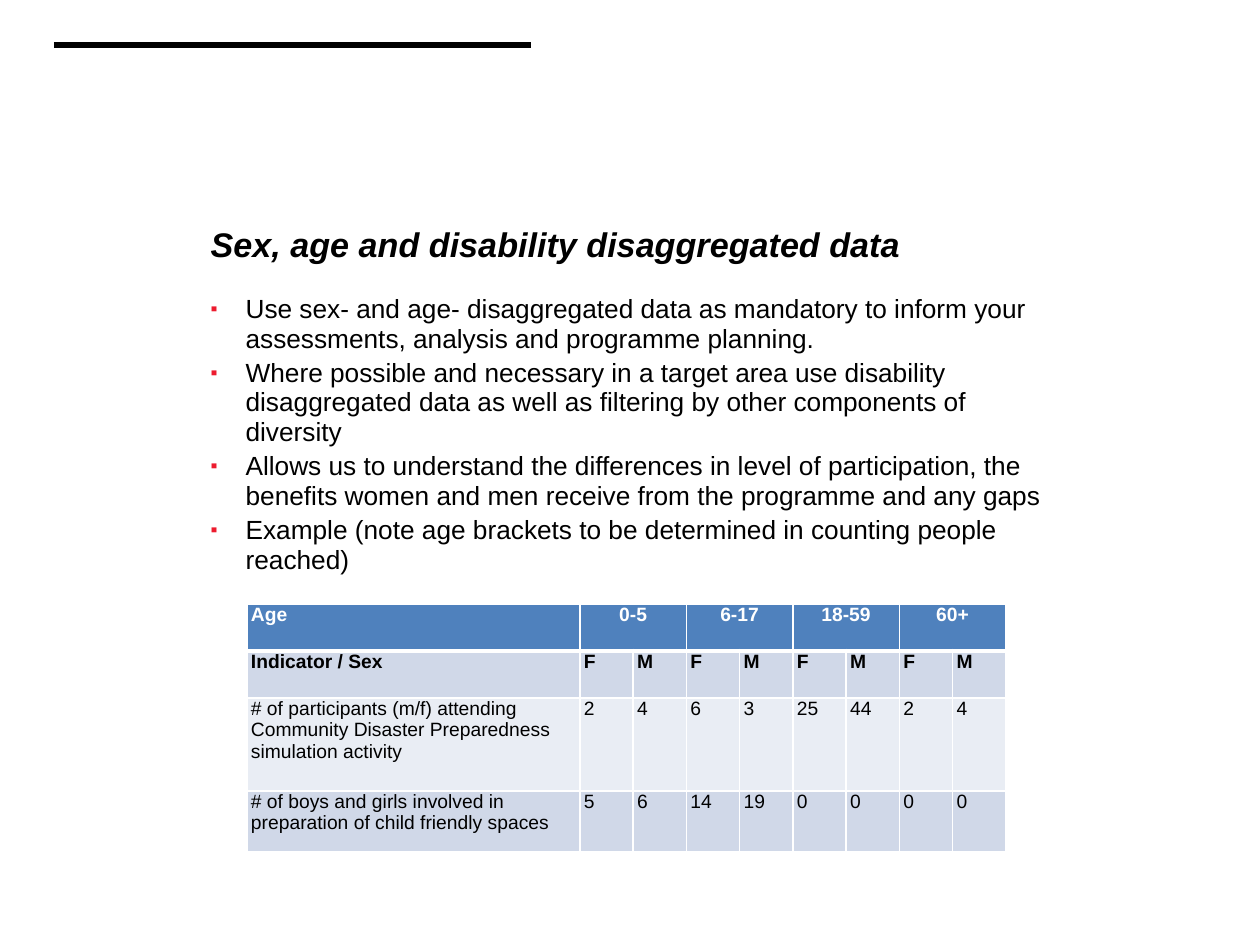
from lxml.etree import SubElement
from pptx import Presentation
from pptx.dml.color import RGBColor
from pptx.enum.shapes import MSO_CONNECTOR
from pptx.enum.text import MSO_ANCHOR, MSO_AUTO_SIZE, PP_ALIGN
from pptx.oxml.ns import qn
from pptx.util import Emu, Pt

PX_PER_INCH = 126
FONT = "Arial"
BLACK, WHITE, RED = "000000", "FFFFFF", "ED1B2E"
HEADER_BLUE, BAND_DARK, BAND_LIGHT = "4F81BD", "D0D8E8", "E9EDF4"

TITLE = "Sex, age and disability disaggregated data"
POINTS = [
    "Use sex- and age- disaggregated data as mandatory to inform your "
    "assessments, analysis and programme planning.",
    "Where possible and necessary in a target area use disability "
    "disaggregated data as well as filtering by other components of diversity",
    "Allows us to understand the differences in level of participation, the "
    "benefits women and men receive from the programme and any gaps",
    "Example (note age brackets to be determined in counting people reached)",
]
AGE_BRACKETS = ["0-5", "6-17", "18-59", "60+"]
INDICATORS = [
    ("# of participants (m/f) attending Community Disaster Preparedness "
     "simulation activity", [2, 4, 6, 3, 25, 44, 2, 4]),
    ("# of boys and girls involved in preparation of child friendly spaces",
     [5, 6, 14, 19, 0, 0, 0, 0]),
]
ROW_HEIGHTS = [47, 47, 93, 61]
LABEL_WIDTH = 333


def px(length):
    return Emu(round(length * 914400 / PX_PER_INCH))


def color(hex_string):
    return RGBColor.from_string(hex_string)


def write(paragraph, text, size, fill=BLACK, bold=False, italic=False,
          align=PP_ALIGN.LEFT):
    paragraph.alignment = align
    run = paragraph.add_run()
    run.text = text
    font = run.font
    font.name, font.size, font.bold, font.italic = FONT, Pt(size), bold, italic
    font.color.rgb = color(fill)


def place(shape, box):
    shape.left, shape.top, shape.width, shape.height = map(px, box)
    frame = shape.text_frame
    frame.word_wrap = True
    frame.auto_size = MSO_AUTO_SIZE.NONE
    return frame


def add_rule(slide, left, right, y):
    rule = slide.shapes.add_connector(
        MSO_CONNECTOR.STRAIGHT, px(left), px(y), px(right), px(y))
    rule.line.color.rgb = color(BLACK)
    rule.line.width = Pt(3)
    SubElement(rule._element.spPr, qn("a:effectLst"))


def fill_title(slide, box):
    frame = place(slide.shapes.title, box)
    frame.vertical_anchor = MSO_ANCHOR.MIDDLE
    write(frame.paragraphs[0], TITLE, 19.5, bold=True, italic=True)


def add_bullet(paragraph):
    properties = paragraph._p.get_or_add_pPr()
    properties.set("marL", str(px(35)))
    properties.set("indent", str(-px(35)))
    bullet_color = SubElement(properties, qn("a:buClr"))
    SubElement(bullet_color, qn("a:srgbClr"), val=RED)
    SubElement(properties, qn("a:buSzPct"), val="75000")
    SubElement(properties, qn("a:buFont"), typeface=FONT)
    SubElement(properties, qn("a:buChar"), char="▪")


def fill_points(slide, box):
    frame = place(slide.placeholders[1], box)
    frame.vertical_anchor = MSO_ANCHOR.TOP
    for index, point in enumerate(POINTS):
        paragraph = frame.add_paragraph() if index else frame.paragraphs[0]
        add_bullet(paragraph)
        paragraph.line_spacing = 0.93
        paragraph.space_before = Pt(3 if index else 0)
        write(paragraph, point, 15)


def style_cell(cell, fill, bottom_width):
    cell.margin_left = cell.margin_right = px(4)
    cell.margin_top = cell.margin_bottom = 0
    cell.vertical_anchor = MSO_ANCHOR.TOP
    properties = cell._tc.get_or_add_tcPr()
    for side in "LRTB":
        width = bottom_width if side == "B" else 1
        line = SubElement(properties, qn(f"a:ln{side}"), w=str(Pt(width)))
        solid = SubElement(line, qn("a:solidFill"))
        SubElement(solid, qn("a:srgbClr"), val=WHITE)
    cell.fill.solid()
    cell.fill.fore_color.rgb = color(fill)


def add_data_table(slide, left, top, width):
    age_row = ["Age"]
    for bracket in AGE_BRACKETS:
        age_row += [bracket, ""]
    rows = [age_row, ["Indicator / Sex"] + ["F", "M"] * len(AGE_BRACKETS)]
    rows += [[label, *values] for label, values in INDICATORS]
    value_count = len(age_row) - 1

    table = slide.shapes.add_table(
        len(rows), len(age_row), px(left), px(top), px(width),
        px(sum(ROW_HEIGHTS))).table
    for index, column in enumerate(table.columns):
        column.width = px((width - LABEL_WIDTH) / value_count if index else LABEL_WIDTH)
    for row, height in zip(table.rows, ROW_HEIGHTS):
        row.height = px(height)

    fills = [HEADER_BLUE, BAND_DARK, BAND_LIGHT, BAND_DARK]
    for r, (values, fill) in enumerate(zip(rows, fills)):
        is_header = r == 0
        for c, value in enumerate(values):
            cell = table.cell(r, c)
            style_cell(cell, fill, 3 if is_header else 1)
            if value != "":
                write(cell.text_frame.paragraphs[0], str(value), 11,
                      fill=WHITE if is_header else BLACK, bold=r < 2,
                      align=PP_ALIGN.CENTER if is_header and c else PP_ALIGN.LEFT)
    for c in range(1, value_count, 2):
        table.cell(0, c).merge(table.cell(0, c + 1))


def main():
    presentation = Presentation()
    presentation.slide_width, presentation.slide_height = px(1260), px(945)
    slide = presentation.slides.add_slide(presentation.slide_layouts[1])
    add_rule(slide, left=54, right=531, y=45)
    fill_title(slide, (198, 185, 856, 118))
    fill_points(slide, (198, 289, 871, 311))
    add_data_table(slide, left=247, top=604, width=759)
    presentation.save("out.pptx")


if __name__ == "__main__":
    main()
